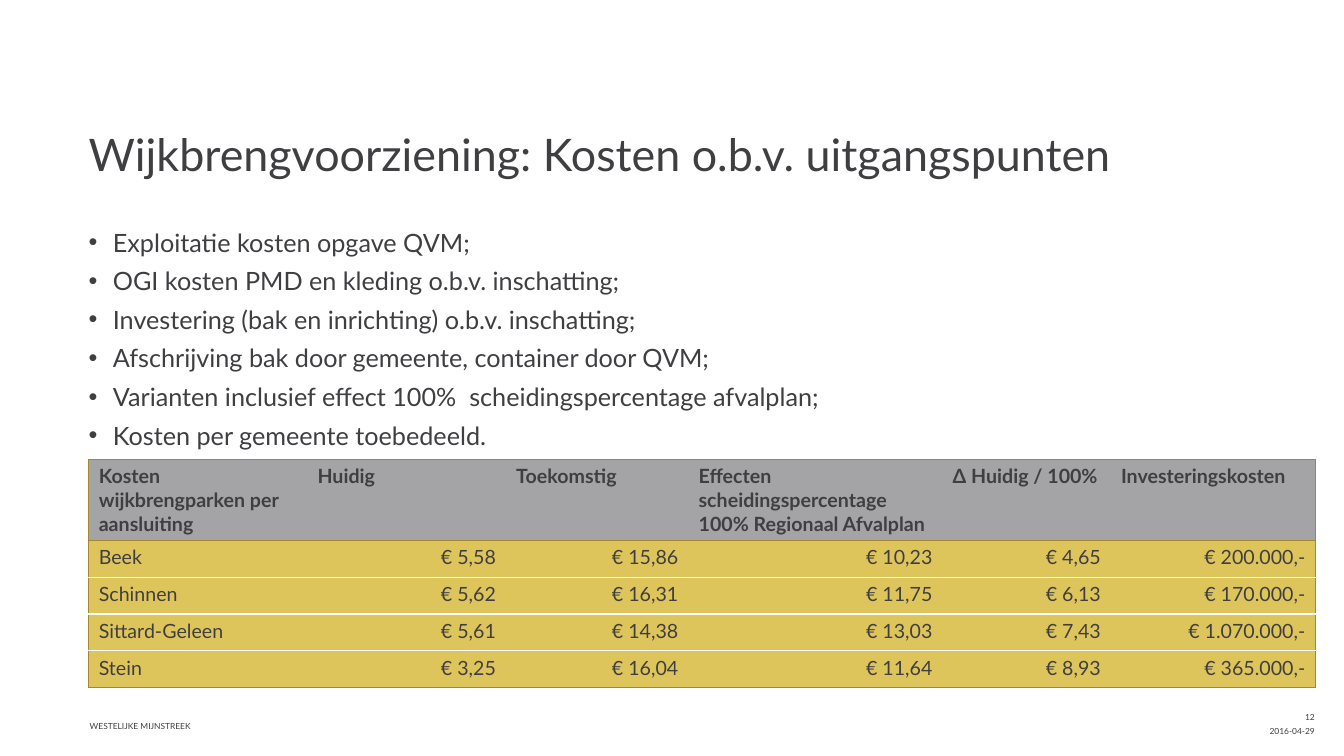
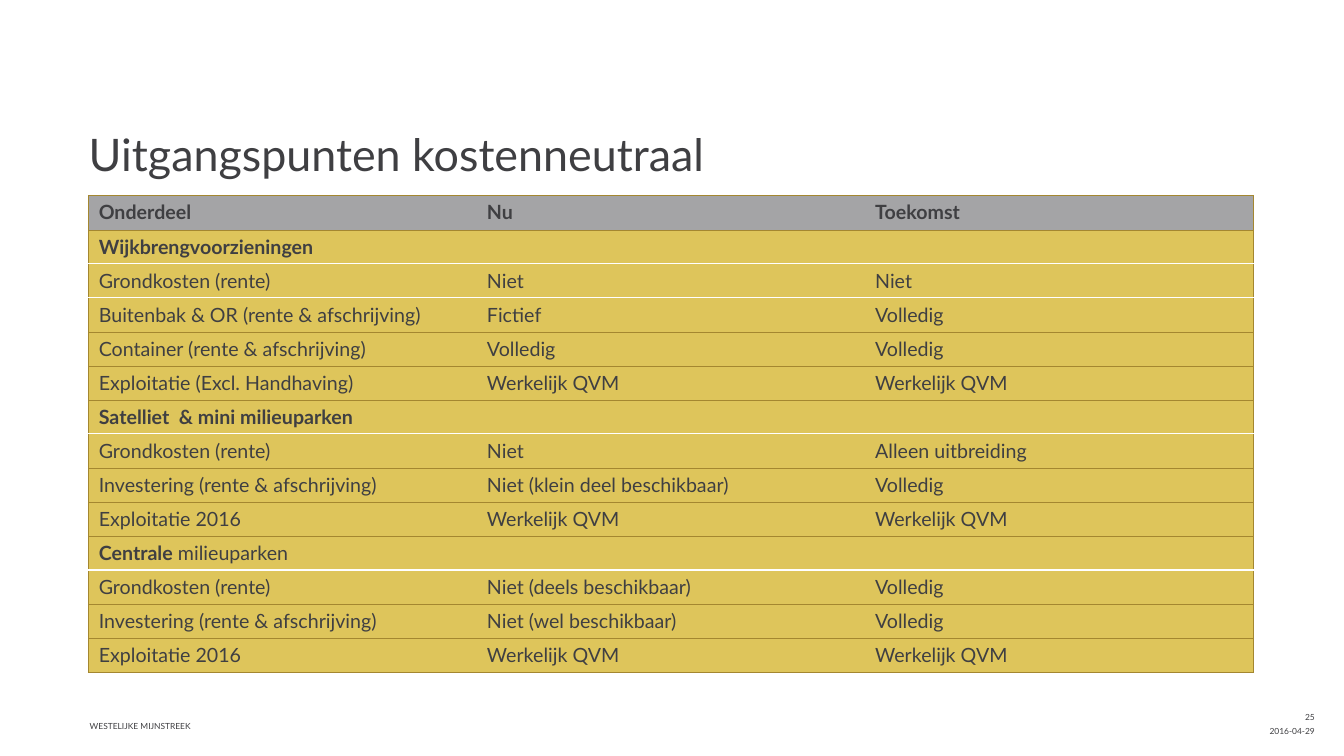
"""Build two slides on the costs and principles of neighbourhood waste facilities."""
from dataclasses import dataclass
from typing import NamedTuple

from lxml.etree import SubElement
from pptx import Presentation
from pptx.dml.color import RGBColor
from pptx.enum.text import MSO_ANCHOR as Anchor, PP_ALIGN as Align
from pptx.oxml.ns import qn
from pptx.util import Inches, Pt

FONT = "Lato"
TEXT = "3F3F42"
HEADER_FILL = "A4A4A6"
BODY_FILL = "DEC55B"
GOLD = "A48730"
WHITE = "FFFFFF"
TABLE_SIZE = 14
LEFT = 0.88
CONTENT_WIDTH = 12.17
INDENT = 0.24


class Run(NamedTuple):
    text: str
    bold: bool = False


Cell = tuple[Run, ...]
Row = tuple[Cell, ...]


@dataclass(frozen=True)
class TextBox:
    left: float
    top: float
    width: float
    height: float
    size: float
    align: Align = Align.LEFT
    anchor: Anchor = Anchor.BOTTOM
    line_spacing: float = 1.0
    space_before: float = 0
    bulleted: bool = False


@dataclass(frozen=True)
class TableDesign:
    top: float
    height: float
    header_height: float
    columns: tuple[float, ...]
    rows: tuple[Row, ...]
    white_lines: frozenset[int]
    value_align: Align = Align.LEFT


TITLE = TextBox(LEFT, 0.83, CONTENT_WIDTH, 0.97, 32, line_spacing=0.9)
BULLETS = TextBox(LEFT, 2.25, CONTENT_WIDTH, 2.25, 18, anchor=Anchor.TOP,
                  space_before=6, bulleted=True)
DATE = TextBox(10.04, 7.18, 3, 0.12, 6, Align.RIGHT)
REGION = TextBox(0.89, 6.99, 2.1, 0.26, 6)
NUMBER = TextBox(10.04, 6.99, 3, 0.17, 6, Align.RIGHT)


def row(*texts: str, bold: bool = False) -> Row:
    return tuple((Run(text, bold),) for text in texts)


def section(*runs: Run) -> Row:
    return (runs, (), ())


ASSUMPTIONS = (
    "Exploitatie kosten opgave QVM;",
    "OGI kosten PMD en kleding o.b.v. inschatting;",
    "Investering (bak en inrichting) o.b.v. inschatting;",
    "Afschrijving bak door gemeente, container door QVM;",
    "Varianten inclusief effect 100%  scheidingspercentage afvalplan;",
    "Kosten per gemeente toebedeeld.",
)

COSTS = TableDesign(
    top=4.56, height=2.26, header_height=0.8,
    columns=(2.17, 1.97, 1.81, 2.52, 1.67, 2.03),
    rows=(
        row("Kosten wijkbrengparken per aansluiting", "Huidig", "Toekomstig",
            "Effecten scheidingspercentage 100% Regionaal Afvalplan",
            "Δ Huidig / 100%", "Investeringskosten", bold=True),
        row("Beek", "€ 5,58", "€ 15,86", "€ 10,23", "€ 4,65", "€ 200.000,-"),
        row("Schinnen", "€ 5,62", "€ 16,31", "€ 11,75", "€ 6,13", "€ 170.000,-"),
        row("Sittard-Geleen", "€ 5,61", "€ 14,38", "€ 13,03", "€ 7,43", "€ 1.070.000,-"),
        row("Stein", "€ 3,25", "€ 16,04", "€ 11,64", "€ 8,93", "€ 365.000,-"),
    ),
    white_lines=frozenset({2, 3, 4}),
    value_align=Align.RIGHT,
)

PRINCIPLES = TableDesign(
    top=1.94, height=4.73, header_height=0.34, columns=(3.85,) * 3,
    rows=(
        row("Onderdeel", "Nu", "Toekomst", bold=True),
        section(Run("Wijkbrengvoorzieningen", True)),
        row("Grondkosten (rente)", "Niet", "Niet"),
        row("Buitenbak & OR (rente & afschrijving)", "Fictief", "Volledig"),
        row("Container (rente & afschrijving)", "Volledig", "Volledig"),
        row("Exploitatie (Excl. Handhaving)", "Werkelijk QVM", "Werkelijk QVM"),
        section(Run("Satelliet  & mini milieuparken", True)),
        row("Grondkosten (rente)", "Niet", "Alleen uitbreiding"),
        row("Investering (rente & afschrijving)", "Niet (klein deel beschikbaar)", "Volledig"),
        row("Exploitatie 2016", "Werkelijk QVM", "Werkelijk QVM"),
        section(Run("Centrale", True), Run(" milieuparken")),
        row("Grondkosten (rente)", "Niet (deels beschikbaar)", "Volledig"),
        row("Investering (rente & afschrijving)", "Niet (wel beschikbaar)", "Volledig"),
        row("Exploitatie 2016", "Werkelijk QVM", "Werkelijk QVM"),
    ),
    white_lines=frozenset({2, 3, 7, 11}),
)


def color(value: str) -> RGBColor:
    return RGBColor.from_string(value)


def add_run(paragraph, content: Run, size: float) -> None:
    run = paragraph.add_run()
    run.text = content.text
    run.font.name = FONT
    run.font.size = Pt(size)
    run.font.bold = content.bold
    run.font.color.rgb = color(TEXT)


def add_bullet(paragraph) -> None:
    properties = paragraph._p.get_or_add_pPr()
    properties.set("marL", str(Inches(INDENT)))
    properties.set("indent", str(-Inches(INDENT)))
    SubElement(properties, qn("a:buFont"), typeface="Arial")
    SubElement(properties, qn("a:buChar"), char="•")


def add_text(slide, box: TextBox, *lines: str) -> None:
    shape = slide.shapes.add_textbox(Inches(box.left), Inches(box.top),
                                     Inches(box.width), Inches(box.height))
    frame = shape.text_frame
    frame.word_wrap = True
    frame.vertical_anchor = box.anchor
    frame.margin_left = frame.margin_right = frame.margin_top = frame.margin_bottom = 0
    for index, line in enumerate(lines):
        paragraph = frame.add_paragraph() if index else frame.paragraphs[0]
        if box.bulleted:
            add_bullet(paragraph)
        paragraph.alignment = box.align
        paragraph.line_spacing = box.line_spacing
        if index:
            paragraph.space_before = Pt(box.space_before)
        add_run(paragraph, Run(line), box.size)


def add_border(cell, side: str, line_color: str | None) -> None:
    width = Pt(1) if line_color == WHITE else Pt(0.5)
    line = SubElement(cell._tc.get_or_add_tcPr(), qn(f"a:ln{side}"), w=str(width))
    if line_color is None:
        SubElement(line, qn("a:noFill"))
    else:
        fill = SubElement(line, qn("a:solidFill"))
        SubElement(fill, qn("a:srgbClr"), val=line_color)


def add_table(slide, design: TableDesign) -> None:
    row_count, column_count = len(design.rows), len(design.columns)
    table = slide.shapes.add_table(
        row_count, column_count, Inches(LEFT), Inches(design.top),
        Inches(sum(design.columns)), Inches(design.height)).table
    for column, width in zip(table.columns, design.columns):
        column.width = Inches(width)
    body_height = (design.height - design.header_height) / (row_count - 1)

    def rule(index: int) -> str:
        return WHITE if index in design.white_lines else GOLD

    for row_index, contents in enumerate(design.rows):
        table.rows[row_index].height = Inches(body_height if row_index else design.header_height)
        for column_index, runs in enumerate(contents):
            cell = table.cell(row_index, column_index)
            add_border(cell, "L", None if column_index else GOLD)
            add_border(cell, "R", GOLD if column_index == column_count - 1 else None)
            add_border(cell, "T", rule(row_index))
            add_border(cell, "B", rule(row_index + 1))
            cell.fill.solid()
            cell.fill.fore_color.rgb = color(BODY_FILL if row_index else HEADER_FILL)
            paragraph = cell.text_frame.paragraphs[0]
            paragraph.alignment = design.value_align if row_index and column_index else Align.LEFT
            for content in runs:
                add_run(paragraph, content, TABLE_SIZE)
            if not runs:
                SubElement(paragraph._p, qn("a:endParaRPr"), sz=str(TABLE_SIZE * 100))


def add_slide(presentation, title: str, number: str):
    slide = presentation.slides.add_slide(presentation.slide_layouts[6])
    add_text(slide, TITLE, title)
    add_text(slide, DATE, "2016-04-29")
    add_text(slide, REGION, "WESTELIJKE MIJNSTREEK")
    add_text(slide, NUMBER, number)
    return slide


def main() -> None:
    presentation = Presentation()
    presentation.slide_width = Inches(13.33)
    presentation.slide_height = Inches(7.5)

    costs = add_slide(presentation, "Wijkbrengvoorziening: Kosten o.b.v. uitgangspunten", "12")
    add_text(costs, BULLETS, *ASSUMPTIONS)
    add_table(costs, COSTS)

    principles = add_slide(presentation, "Uitgangspunten kostenneutraal", "25")
    add_table(principles, PRINCIPLES)

    presentation.save("out.pptx")


if __name__ == "__main__":
    main()
